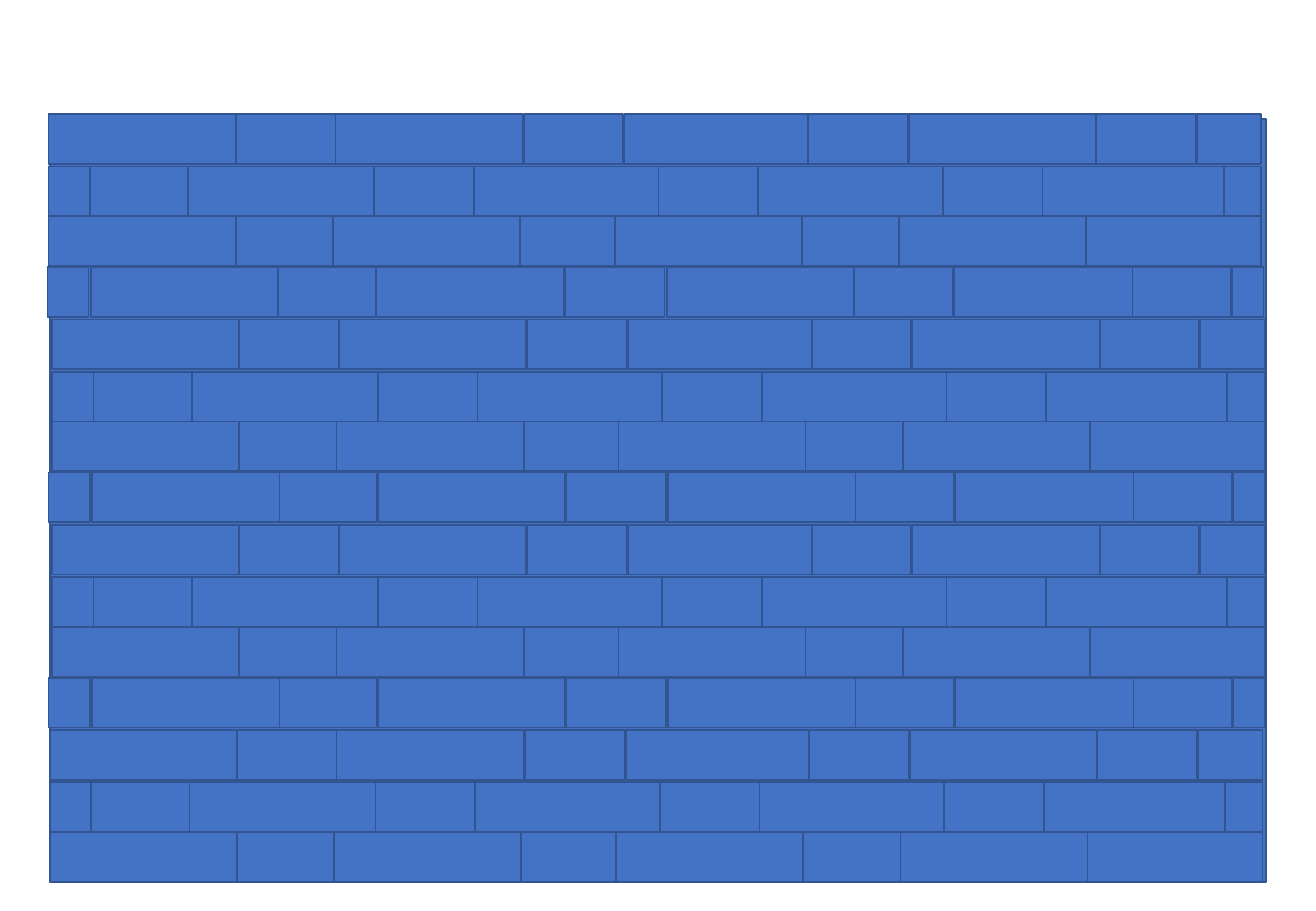
from pptx import Presentation
from pptx.dml.color import RGBColor
from pptx.enum.shapes import MSO_SHAPE
from pptx.util import Inches, Pt

RECTANGLE = MSO_SHAPE.RECTANGLE
BRICK_BLUE = RGBColor(0x44, 0x72, 0xC4)
JOINT_BLUE = RGBColor(0x32, 0x54, 0x91)

LONG, SHORT, HEIGHT = 1.54, 0.82, 0.41

# Each course: brick width and offsets from the course's left edge, in drawing order
HEADER_END = [(LONG, (0, 2.36, 4.74, 7.08)), (SHORT, (1.54, 3.91, 6.25, 8.62)),
              (0.53, (9.45,))]
HEADER_START = [(LONG, (1.15, 3.49, 5.84, 8.18)), (SHORT, (0.33, 2.68, 5.02, 7.36)),
                (0.34, (0,)), (0.31, (9.67,))]
LONG_END = [(SHORT, (1.54, 3.85, 6.2)), (1.49, (8.49,)),
            (LONG, (7.0, 4.66, 2.34, 0))]
STUB_ENDS = [(SHORT, (1.88, 4.26, 6.63, 8.92)), (LONG, (0.36, 2.71, 5.1)),
             (1.47, (7.46,)), (0.34, (0,)), (0.26, (9.75,))]

# Course pattern and its drop below the top of the band
COURSES = [(HEADER_END, 0), (HEADER_START, 0.43), (LONG_END, 0.84), (STUB_ENDS, 1.26)]

# Left edges of the four courses in each band; the last band has three courses
BANDS = [(0.4, 0.4, 0.4, 0.39), (0.43, 0.43, 0.43, 0.4),
         (0.43, 0.43, 0.43, 0.4), (0.41, 0.41, 0.41)]
WALL_TOP, BAND_HEIGHT = 0.94, 1.69


class BrickWall:
    def __init__(self, slide):
        self.group = slide.shapes.add_group_shape()

    def brick(self, left, top, width, height=HEIGHT):
        shape = self.group.shapes.add_shape(
            RECTANGLE, Inches(left), Inches(top), Inches(width), Inches(height))
        shape.shadow.inherit = False
        shape.fill.solid()
        shape.fill.fore_color.rgb = BRICK_BLUE
        shape.line.color.rgb = JOINT_BLUE
        shape.line.width = Pt(1)

    def course(self, pattern, left, top):
        for width, offsets in pattern:
            for offset in offsets:
                self.brick(left + offset, top, width)


def main():
    presentation = Presentation()
    presentation.slide_width = Inches(10.83)
    presentation.slide_height = Inches(7.5)
    slide = presentation.slides.add_slide(presentation.slide_layouts[6])
    wall = BrickWall(slide)

    # Backing panel
    wall.brick(0.41, 0.98, 10.01, 6.28)

    # Courses of bricks, band by band
    for band, lefts in enumerate(BANDS):
        for left, (pattern, drop) in zip(lefts, COURSES):
            wall.course(pattern, left, WALL_TOP + band * BAND_HEIGHT + drop)

    presentation.save("out.pptx")


if __name__ == "__main__":
    main()
